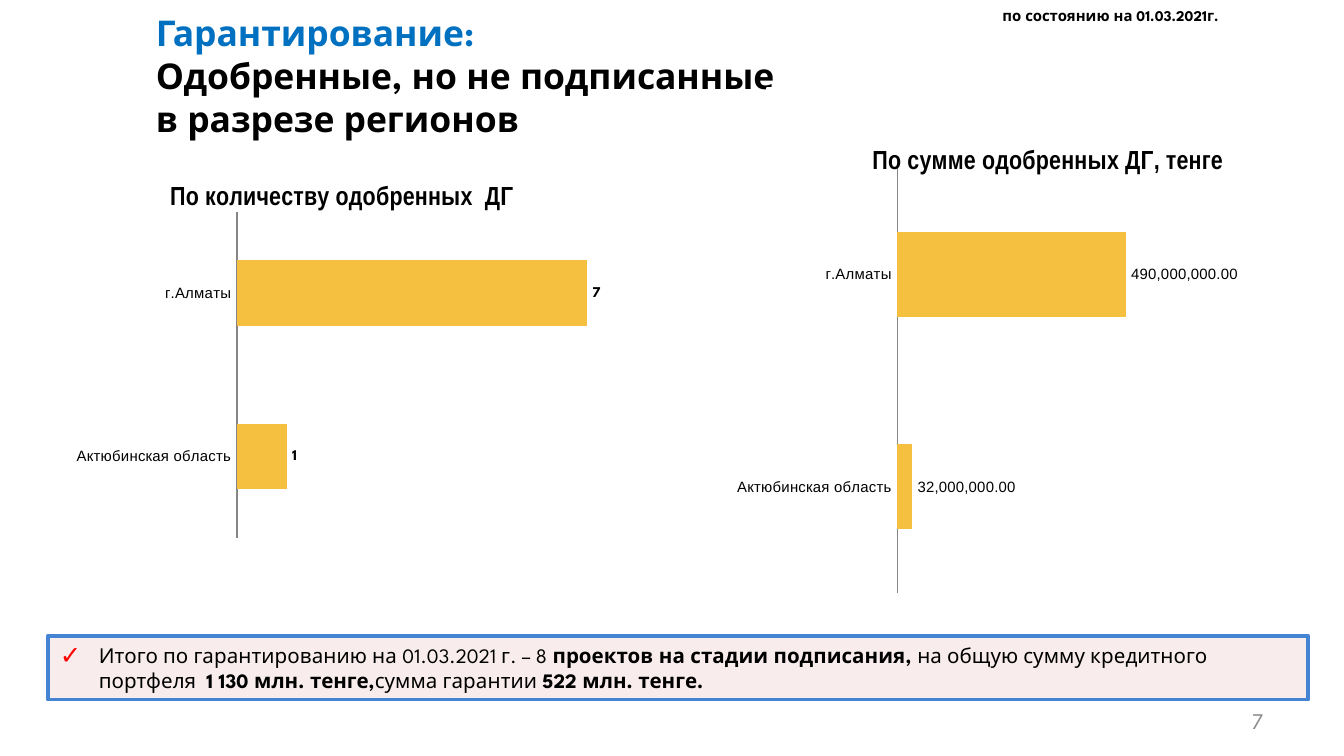
from lxml.etree import SubElement
from pptx import Presentation
from pptx.chart.data import CategoryChartData
from pptx.dml.color import RGBColor
from pptx.enum.chart import XL_CHART_TYPE, XL_LABEL_POSITION, XL_TICK_LABEL_POSITION, XL_TICK_MARK
from pptx.enum.shapes import MSO_SHAPE
from pptx.enum.text import MSO_ANCHOR, MSO_AUTO_SIZE, PP_ALIGN
from pptx.oxml import parse_xml
from pptx.oxml.ns import nsdecls, qn
from pptx.util import Inches, Pt

BLACK = RGBColor(0, 0, 0)
WHITE = RGBColor(255, 255, 255)
BLUE = RGBColor(0x00, 0x70, 0xC0)
BORDER = RGBColor(0x45, 0x84, 0xD3)
PINK = RGBColor(0xF2, 0xDC, 0xDB)
GOLD = RGBColor(0xF5, 0xC0, 0x40)
GRAY = RGBColor(0x8C, 0x8C, 0x8C)
AXIS_GRAY = RGBColor(0x86, 0x86, 0x86)
FONT = "League Spartan"

# Widescreen slide, 16:9
presentation = Presentation()
presentation.slide_width = Inches(10)
presentation.slide_height = presentation.slide_width * 9 // 16
slide = presentation.slides.add_slide(presentation.slide_layouts[5])


def area(left, top, width, height):
    """Turn percentages of the slide's size into a position and size."""
    column, row = presentation.slide_width / 100, presentation.slide_height / 100
    return int(left * column), int(top * row), int(width * column), int(height * row)


def set_layout(parent, before, left, top, size=None):
    """Fix a chart part at shares of the chart's size."""
    values = {"xMode": "edge", "yMode": "edge", "x": left, "y": top}
    if size:
        values = {"layoutTarget": "inner", **values, "w": size[0], "h": size[1]}
    for old in parent.findall(qn("c:layout")):
        parent.remove(old)
    items = "".join(f'<c:{name} val="{value}"/>' for name, value in values.items())
    layout = parse_xml(f'<c:layout {nsdecls("c")}><c:manualLayout>{items}</c:manualLayout></c:layout>')
    parent.find(qn(before)).addprevious(layout)


# White patch behind the title
patch = slide.shapes.add_shape(MSO_SHAPE.RECTANGLE, *area(57.1, 11.74, 3.9, 6.94))
patch.shadow.inherit = False
patch.fill.solid()
patch.fill.fore_color.rgb = WHITE
patch.line.color.rgb = WHITE
patch.line.width = Pt(2)

# Title
title = slide.shapes.title
title.left, title.top, title.width, title.height = area(10.6, 6.58, 90, 12.28)
frame = title.text_frame
frame.auto_size = MSO_AUTO_SIZE.NONE
frame.vertical_anchor = MSO_ANCHOR.MIDDLE
frame.margin_bottom = Inches(0.36)
paragraph = frame.paragraphs[0]
paragraph.alignment = PP_ALIGN.LEFT
for index, (line, color) in enumerate([
    ("Гарантирование: ", BLUE),
    ("Одобренные, но не подписанные ", BLACK),
    ("в разрезе регионов", BLACK),
]):
    if index:
        paragraph.add_line_break()
    run = paragraph.add_run()
    run.text = line
    run.font.color.rgb = color
paragraph.font.name = FONT
paragraph.font.size = Pt(19)
paragraph.font.bold = True

# Date and slide number
for text, position, size, color, bold, alignment, anchor in [
    ("по состоянию на 01.03.2021г.", (73.6, 0, 22.8, 4.27), 8, BLACK, True,
     PP_ALIGN.LEFT, MSO_ANCHOR.TOP),
    ("7", (71.7, 92.7, 23.3, 5.34), 12, GRAY, False, PP_ALIGN.RIGHT, MSO_ANCHOR.MIDDLE),
]:
    frame = slide.shapes.add_textbox(*area(*position)).text_frame
    frame.word_wrap = True
    frame.vertical_anchor = anchor
    paragraph = frame.paragraphs[0]
    paragraph.text = text
    paragraph.alignment = alignment
    paragraph.font.name = FONT
    paragraph.font.size = Pt(size)
    paragraph.font.bold = bold
    paragraph.font.color.rgb = color

# Summary box
summary = slide.shapes.add_shape(MSO_SHAPE.RECTANGLE, *area(3.55, 84.16, 93.8, 8.4))
summary.shadow.inherit = False
summary.fill.solid()
summary.fill.fore_color.rgb = PINK
fill_color = summary.fill._xPr.find(qn("a:solidFill"))[0]
SubElement(fill_color, qn("a:alpha"), val="50000")
summary.line.color.rgb = BORDER
summary.line.width = Pt(2)
frame = summary.text_frame
frame.word_wrap = True
frame.vertical_anchor = MSO_ANCHOR.MIDDLE
frame.margin_left = frame.margin_right = Inches(0.08)
frame.margin_top = frame.margin_bottom = Inches(0.04)
paragraph = frame.paragraphs[0]
paragraph.alignment = PP_ALIGN.LEFT
paragraph.space_after = Pt(6)
properties = paragraph._p.get_or_add_pPr()
properties.set("marL", str(Inches(0.3)))
properties.set("indent", str(Inches(-0.29)))
SubElement(SubElement(properties, qn("a:buClr")), qn("a:srgbClr"), val="FF0000")
SubElement(properties, qn("a:buSzPct"), val="125000")
SubElement(properties, qn("a:buFont"), typeface="Arial")
SubElement(properties, qn("a:buChar"), char="✓")
for index, text in enumerate([
    "Итого по гарантированию на 01.03.2021 г. – 8 ",
    "проектов на стадии подписания, ",
    "на общую сумму кредитного портфеля  ",
    "1 130 млн. тенге,",
    "сумма гарантии ",
    "522 млн. тенге.",
]):
    run = paragraph.add_run()
    run.text = text
    run.font.bold = index % 2 == 1
paragraph.font.name = FONT
paragraph.font.size = Pt(11)
paragraph.font.color.rgb = BLACK

# Bar charts by region
for heading, position, values, maximum, title_place, plot, label_format, label_font, bold in [
    ("По количеству одобренных  ДГ", (1.2, 21.53, 48.3, 51.7), (1, 7), 8,
     (0.23, 0.04), (0.34, 0.125, 0.617, 0.835), "General", FONT, True),
    ("По сумме одобренных ДГ, тенге", (53.3, 17.44, 43.3, 66.3), (32000000, 490000000),
     600000000, (0.26, 0.02), (0.311, 0.072, 0.481, 0.848), "#,##0.00", "Arial", False),
]:
    data = CategoryChartData()
    data.categories = ["Актюбинская область", "г.Алматы"]
    data.add_series("Series 1", values)
    chart = slide.shapes.add_chart(XL_CHART_TYPE.BAR_CLUSTERED, *area(*position), data).chart
    chart.has_legend = False
    chart.font.name = FONT
    chart.font.size = Pt(10)
    chart.font.color.rgb = BLACK

    chart.has_title = True
    paragraph = chart.chart_title.text_frame.paragraphs[0]
    paragraph.text = heading
    paragraph.font.name = "Arial Narrow"
    paragraph.font.size = Pt(14)
    paragraph.font.bold = True
    paragraph.font.color.rgb = BLACK
    chart.chart_title.include_in_layout = False
    set_layout(chart.chart_title._element, "c:overlay", *title_place)
    set_layout(chart._chartSpace.chart.plotArea, "c:barChart", *plot[:2], size=plot[2:])

    axis = chart.category_axis
    axis.major_tick_mark = XL_TICK_MARK.NONE
    axis.minor_tick_mark = XL_TICK_MARK.NONE
    axis.tick_label_position = XL_TICK_LABEL_POSITION.NEXT_TO_AXIS
    axis.tick_labels.font.name = "Arial"
    axis.tick_labels.font.size = Pt(8)
    axis.format.line.color.rgb = AXIS_GRAY
    axis.format.line.width = Pt(0.75)
    chart.value_axis.minimum_scale = 0
    chart.value_axis.maximum_scale = maximum
    chart.value_axis.has_major_gridlines = False
    chart.value_axis.visible = False

    bars = chart.plots[0]
    bars.gap_width = 150
    bars.vary_by_categories = False
    bars.series[0].format.fill.solid()
    bars.series[0].format.fill.fore_color.rgb = GOLD
    labels = bars.series[0].data_labels
    labels.show_value = True
    labels.position = XL_LABEL_POSITION.OUTSIDE_END
    labels.number_format = label_format
    labels.number_format_is_linked = False
    labels.font.name = label_font
    labels.font.size = Pt(8)
    labels.font.bold = bold
    labels.font.color.rgb = BLACK

presentation.save("out.pptx")
